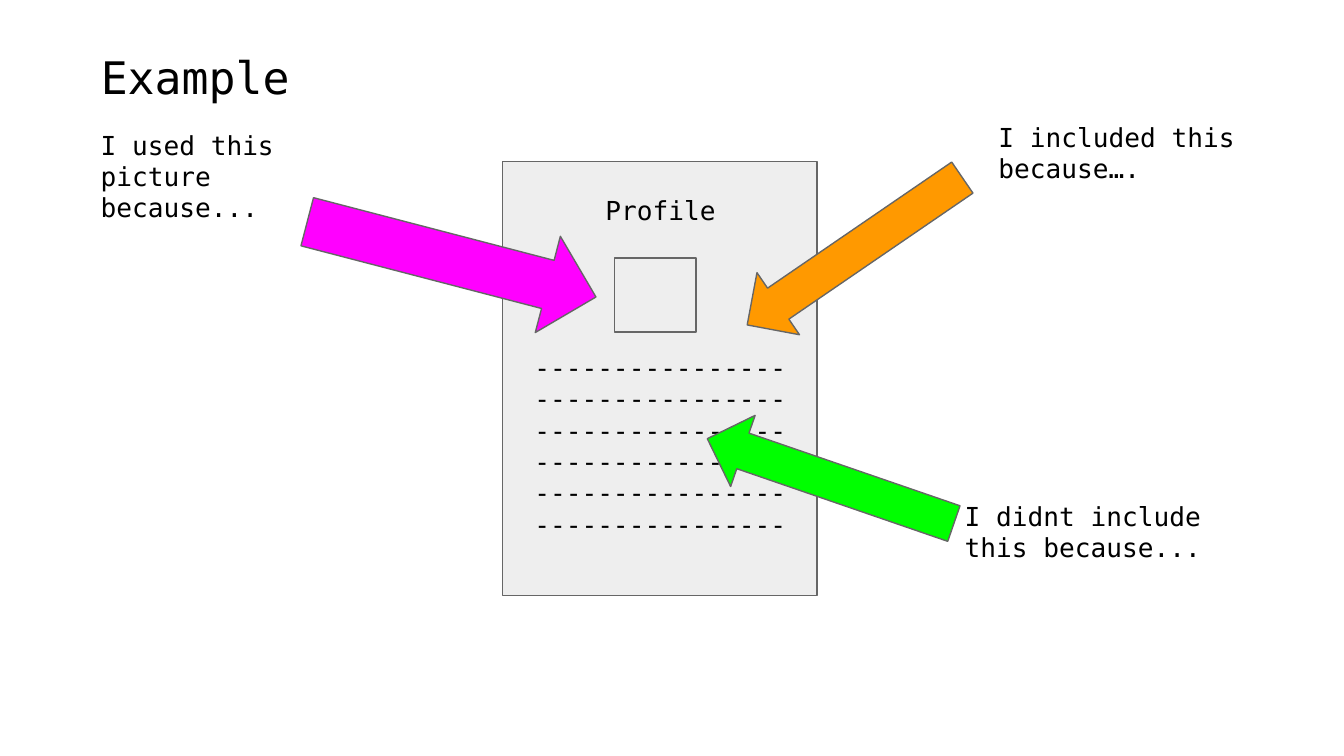
from typing import NamedTuple

from pptx import Presentation
from pptx.dml.color import RGBColor
from pptx.enum.shapes import MSO_SHAPE
from pptx.enum.text import MSO_ANCHOR, MSO_AUTO_SIZE, PP_ALIGN
from pptx.util import Inches, Pt

RECT = MSO_SHAPE.RECTANGLE
LEFT_ARROW = MSO_SHAPE.LEFT_ARROW
TOP = MSO_ANCHOR.TOP
NO_FIT = MSO_AUTO_SIZE.NONE
LEFT = PP_ALIGN.LEFT
CENTER = PP_ALIGN.CENTER

SLIDE_WIDTH = 10
SLIDE_HEIGHT = SLIDE_WIDTH * 9 / 16
FONT = "DejaVu Sans Mono"
COLORS = {
    "text": "000000",
    "line": "666666",
    "page": "EEEEEE",
    "orange": "FF9900",
    "green": "00FF00",
    "magenta": "FF00FF",
}
BODY_SIZE = 14
TITLE_SIZE = 24
DASH_COUNT = 6 * 16
PICTURE_GAP = 67


class Box(NamedTuple):
    left: float
    top: float
    width: float
    height: float


class Panel(NamedTuple):
    box: Box
    color: str
    kind: MSO_SHAPE = RECT
    rotation: float = 0


class Note(NamedTuple):
    box: Box
    paragraphs: tuple[str, ...]
    align: PP_ALIGN = LEFT
    gap: float = 0


PAGE = Panel(Box(3.74, 1.2, 2.34, 3.23), "page")
PICTURE = Panel(Box(4.57, 1.92, 0.61, 0.55), "page")
PROFILE = Note(Box(3.85, 1.35, 2.13, 2.97),
               ("Profile", "-" * DASH_COUNT), CENTER, PICTURE_GAP)
COMMENTS = (
    Note(Box(7.33, 0.8, 2.09, 1.11), ("I included this because….",)),
    Note(Box(7.08, 3.62, 2.34, 1.23), ("I didnt include this because...",)),
    Note(Box(0.65, 0.86, 1.59, 1.11), ("I used this picture because...",)),
)
ARROWS = (
    Panel(Box(5.39, 1.59, 1.94, 0.56), "orange", LEFT_ARROW, 325.6),
    Panel(Box(5.21, 3.3, 1.94, 0.56), "green", LEFT_ARROW, 19),
    Panel(Box(2.25, 1.56, 2.22, 0.74), "magenta", LEFT_ARROW, 194.6),
)
TITLE_BOX = Box(0.65, 0.27, 4.35, 0.66)


def rgb(name: str) -> RGBColor:
    return RGBColor.from_string(COLORS[name])


def inches(box: Box) -> list[Inches]:
    return [Inches(v) for v in box]


def write(tf, paragraphs: tuple[str, ...], size: float,
          align: PP_ALIGN = LEFT, gap: float = 0) -> None:
    tf.word_wrap = True
    tf.auto_size = NO_FIT
    tf.vertical_anchor = TOP
    tf.margin_left = tf.margin_right = Inches(0.1)
    tf.margin_top = tf.margin_bottom = Inches(0.1)
    for i, text in enumerate(paragraphs):
        p = tf.add_paragraph() if i else tf.paragraphs[0]
        p.alignment = align
        p.space_before = Pt(gap if i else 0)
        r = p.add_run()
        r.text = text
        r.font.name = FONT
        r.font.size = Pt(size)
        r.font.color.rgb = rgb("text")


def draw_panel(s, panel: Panel) -> None:
    sp = s.shapes.add_shape(panel.kind, *inches(panel.box))
    sp.rotation = panel.rotation
    sp.shadow.inherit = False
    sp.fill.solid()
    sp.fill.fore_color.rgb = rgb(panel.color)
    sp.line.color.rgb = rgb("line")
    sp.line.width = Pt(0.75)


def draw_note(s, note: Note) -> None:
    sp = s.shapes.add_textbox(*inches(note.box))
    write(sp.text_frame, note.paragraphs, BODY_SIZE, note.align, note.gap)


def draw_title(s, text: str) -> None:
    sp = s.shapes.title
    sp.left, sp.top, sp.width, sp.height = inches(TITLE_BOX)
    write(sp.text_frame, (text,), TITLE_SIZE)


def main() -> None:
    prs = Presentation()
    prs.slide_width = Inches(SLIDE_WIDTH)
    prs.slide_height = Inches(SLIDE_HEIGHT)
    s = prs.slides.add_slide(prs.slide_layouts[5])
    draw_title(s, "Example")
    draw_panel(s, PAGE)
    draw_note(s, PROFILE)
    draw_panel(s, PICTURE)
    for comment in COMMENTS:
        draw_note(s, comment)
    for arrow in ARROWS:
        draw_panel(s, arrow)
    prs.save("out.pptx")


if __name__ == "__main__":
    main()
